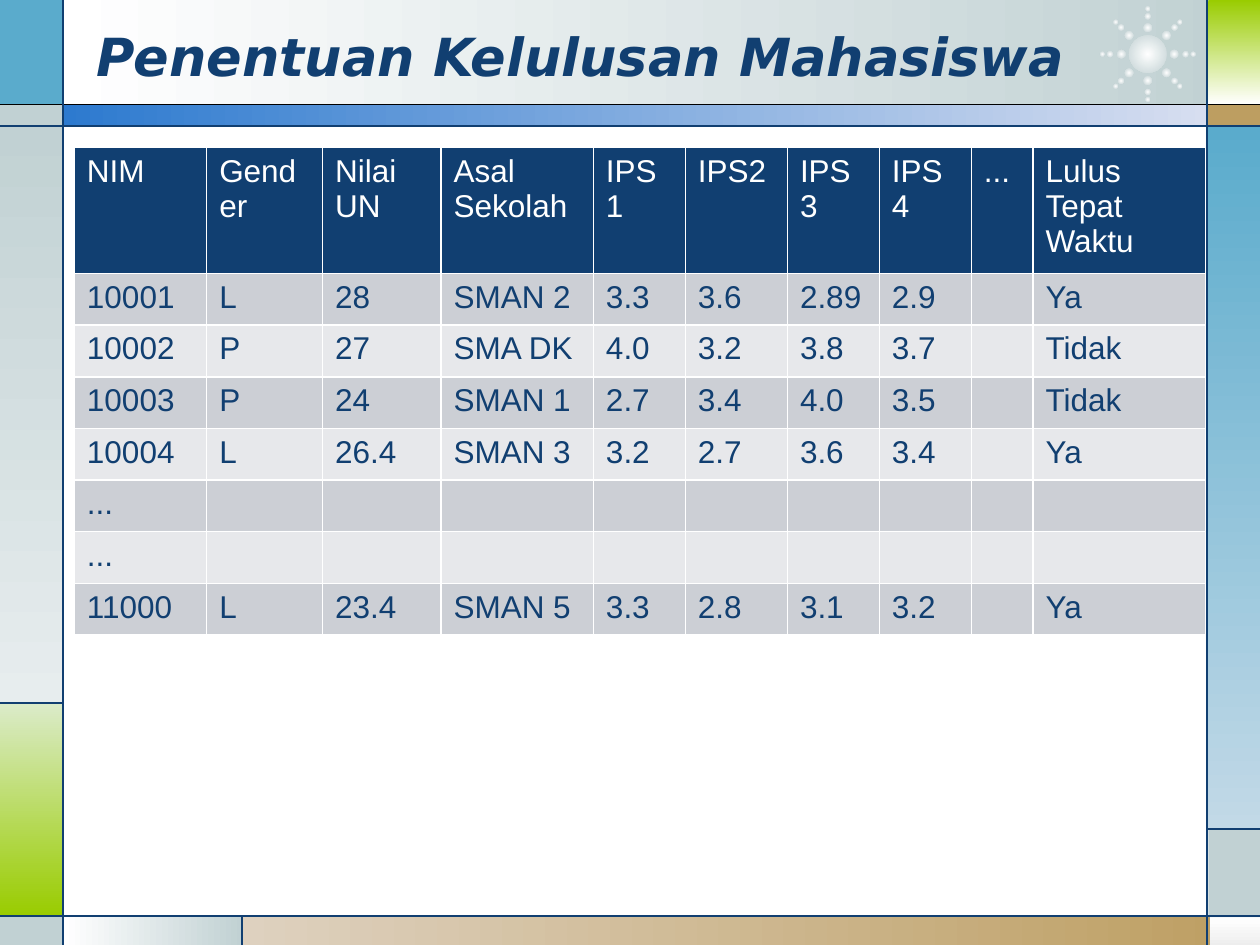
from math import cos, radians, sin

from lxml import etree
from pptx import Presentation
from pptx.dml.color import RGBColor
from pptx.enum.shapes import MSO_CONNECTOR, MSO_SHAPE
from pptx.enum.text import MSO_ANCHOR
from pptx.oxml.ns import qn
from pptx.util import Inches, Pt

RECT, OVAL = MSO_SHAPE.RECTANGLE, MSO_SHAPE.OVAL
STRAIGHT = MSO_CONNECTOR.STRAIGHT
NAVY, WHITE, BLACK = "113F71", "FFFFFF", "000000"
MIST, SKY, LIME, TAN = "C1D1D3", "5AABCC", "99CC00", "BD9E61"
ACROSS, DOWN = 0, 270  # gradient angles, counter-clockwise

TITLE = "Penentuan Kelulusan Mahasiswa"
HEADER = ["NIM", "Gender", "Nilai UN", "Asal Sekolah", "IPS1", "IPS2",
          "IPS3", "IPS 4", "...", "Lulus Tepat Waktu"]
STUDENTS = [
    ["10001", "L", "28", "SMAN 2", "3.3", "3.6", "2.89", "2.9", "", "Ya"],
    ["10002", "P", "27", "SMA DK", "4.0", "3.2", "3.8", "3.7", "", "Tidak"],
    ["10003", "P", "24", "SMAN 1", "2.7", "3.4", "4.0", "3.5", "", "Tidak"],
    ["10004", "L", "26.4", "SMAN 3", "3.2", "2.7", "3.6", "3.4", "", "Ya"],
    ["..."] + [""] * 9,
    ["..."] + [""] * 9,
    ["11000", "L", "23.4", "SMAN 5", "3.3", "2.8", "3.1", "3.2", "", "Ya"],
]
COLUMN_WIDTHS = [1.05, 0.92, 0.94, 1.21, 0.73, 0.81, 0.73, 0.73, 0.49, 1.37]
HEADER_HEIGHT, ROW_HEIGHT = 0.93, 0.41
BANDS = ["CCCFD5", "E7E8EB"]

# left, top, width, height, colours, gradient angle
PANELS = [
    (0.5, 0, 9.27, 0.84, [WHITE, MIST], ACROSS),
    (0, 0, 0.5, 0.84, [SKY], None),
    (0, 0.83, 0.5, 0.17, [MIST], None),
    (0, 1, 0.5, 4.58, [MIST, "E7EDEE"], DOWN),
    (0, 5.58, 0.5, 1.69, ["DBEBC9", LIME], DOWN),
    (0, 7.28, 0.5, 0.23, [MIST], None),
    (0.5, 7.27, 1.43, 0.24, [WHITE, MIST], ACROSS),
    (1.92, 7.27, 8.08, 0.24, ["DED1BF", TAN], ACROSS),
    (9.6, 7.28, 0.4, 0.23, [WHITE, "EDEDED"], DOWN),
    (9.59, 6.58, 0.41, 0.7, [MIST], None),
    (9.58, 1, 0.42, 5.58, [SKY, "C2D9E7"], DOWN),
    (9.58, 0.83, 0.42, 0.17, [TAN], None),
    (9.59, 0, 0.41, 0.83, [LIME, WHITE], DOWN),
    (0.5, 0.83, 9.09, 0.17, ["2D7ACF", "D7DEF0"], ACROSS),
]
# x1, y1, x2, y2, colour
RULES = [
    (0, 0.83, 10, 0.83, BLACK),
    (0, 1, 10, 1, NAVY),
    (0, 7.27, 10, 7.27, NAVY),
    (0.5, 0, 0.5, 7.5, NAVY),
    (9.58, 0, 9.58, 7.5, NAVY),
    (0.5, 5.58, 0, 5.58, NAVY),
    (1.92, 7.27, 1.92, 7.5, NAVY),
    (9.58, 6.58, 10, 6.58, NAVY),
]
STAR_X, STAR_Y, STAR_SIZE, RAYS = 9.11, 0.43, 0.3, 8
RAY_DOTS = [(0.21, 0.07), (0.3, 0.05), (0.36, 0.04)]  # distance, size


def rgb(color):
    return RGBColor.from_string(color)


def add_panel(kind, left, top, width, height, colors, angle=None):
    panel = slide.shapes.add_shape(
        kind, Inches(left), Inches(top), Inches(width), Inches(height))
    panel.shadow.inherit = False
    panel.line.fill.background()
    if len(colors) == 1:
        panel.fill.solid()
        panel.fill.fore_color.rgb = rgb(colors[0])
    else:
        panel.fill.gradient()
        for stop, color in zip(panel.fill.gradient_stops, colors):
            stop.color.rgb = rgb(color)
        if angle is not None:
            panel.fill.gradient_angle = angle
    return panel


def add_glow(x, y, size):
    """Centre a dot on (x, y) that fades from white outwards."""
    dot = add_panel(OVAL, x - size / 2, y - size / 2, size, size, [WHITE, MIST])
    gradient = dot.fill._xPr.find(qn("a:gradFill"))
    gradient.remove(gradient.find(qn("a:lin")))
    radial = etree.SubElement(gradient, qn("a:path"), {"path": "circle"})
    etree.SubElement(radial, qn("a:fillToRect"), dict.fromkeys("ltrb", "50000"))


def add_rule(x1, y1, x2, y2, color):
    rule = slide.shapes.add_connector(
        STRAIGHT, Inches(x1), Inches(y1), Inches(x2), Inches(y2))
    rule.line.color.rgb = rgb(color)
    rule.line.width = Pt(0.75)
    etree.SubElement(rule._element.spPr, qn("a:effectLst"))


def style_cell(cell, text, fill, color):
    properties = cell._tc.get_or_add_tcPr()
    for side in ("a:lnL", "a:lnR", "a:lnT", "a:lnB"):
        border = etree.SubElement(properties, qn(side), {"w": str(Pt(1))})
        solid = etree.SubElement(border, qn("a:solidFill"))
        etree.SubElement(solid, qn("a:srgbClr"), {"val": WHITE})
    cell.fill.solid()
    cell.fill.fore_color.rgb = rgb(fill)
    cell.text = text
    font = cell.text_frame.paragraphs[0].font
    font.name, font.size, font.bold = "Arial", Pt(18), False
    font.color.rgb = rgb(color)


presentation = Presentation()
presentation.slide_width, presentation.slide_height = Inches(10), Inches(7.5)
slide = presentation.slides.add_slide(presentation.slide_layouts[6])

for panel_spec in PANELS:
    add_panel(RECT, *panel_spec)

add_glow(STAR_X, STAR_Y, STAR_SIZE)
for ray in range(RAYS):
    direction = radians(ray * 360 / RAYS)
    for distance, size in RAY_DOTS:
        add_glow(STAR_X + distance * cos(direction),
                 STAR_Y + distance * sin(direction), size)

for rule_spec in RULES:
    add_rule(*rule_spec)

title = slide.shapes.add_textbox(
    Inches(0.67), Inches(0.13), Inches(8.48), Inches(0.62)).text_frame
title.word_wrap = True
title.vertical_anchor = MSO_ANCHOR.MIDDLE
title.text = TITLE
title_font = title.paragraphs[0].font
title_font.name, title_font.size = "DejaVu Sans", Pt(30)
title_font.bold = title_font.italic = True
title_font.color.rgb = rgb(NAVY)

rows = [HEADER] + STUDENTS
heights = [HEADER_HEIGHT] + [ROW_HEIGHT] * len(STUDENTS)
grades = slide.shapes.add_table(
    len(rows), len(HEADER), Inches(0.59), Inches(1.17),
    Inches(sum(COLUMN_WIDTHS)), Inches(sum(heights))).table
for column, width in zip(grades.columns, COLUMN_WIDTHS):
    column.width = Inches(width)
for r, (values, height) in enumerate(zip(rows, heights)):
    grades.rows[r].height = Inches(height)
    fill, color = (BANDS[(r - 1) % 2], NAVY) if r else (NAVY, WHITE)
    for c, value in enumerate(values):
        style_cell(grades.cell(r, c), value, fill, color)

presentation.save("out.pptx")
